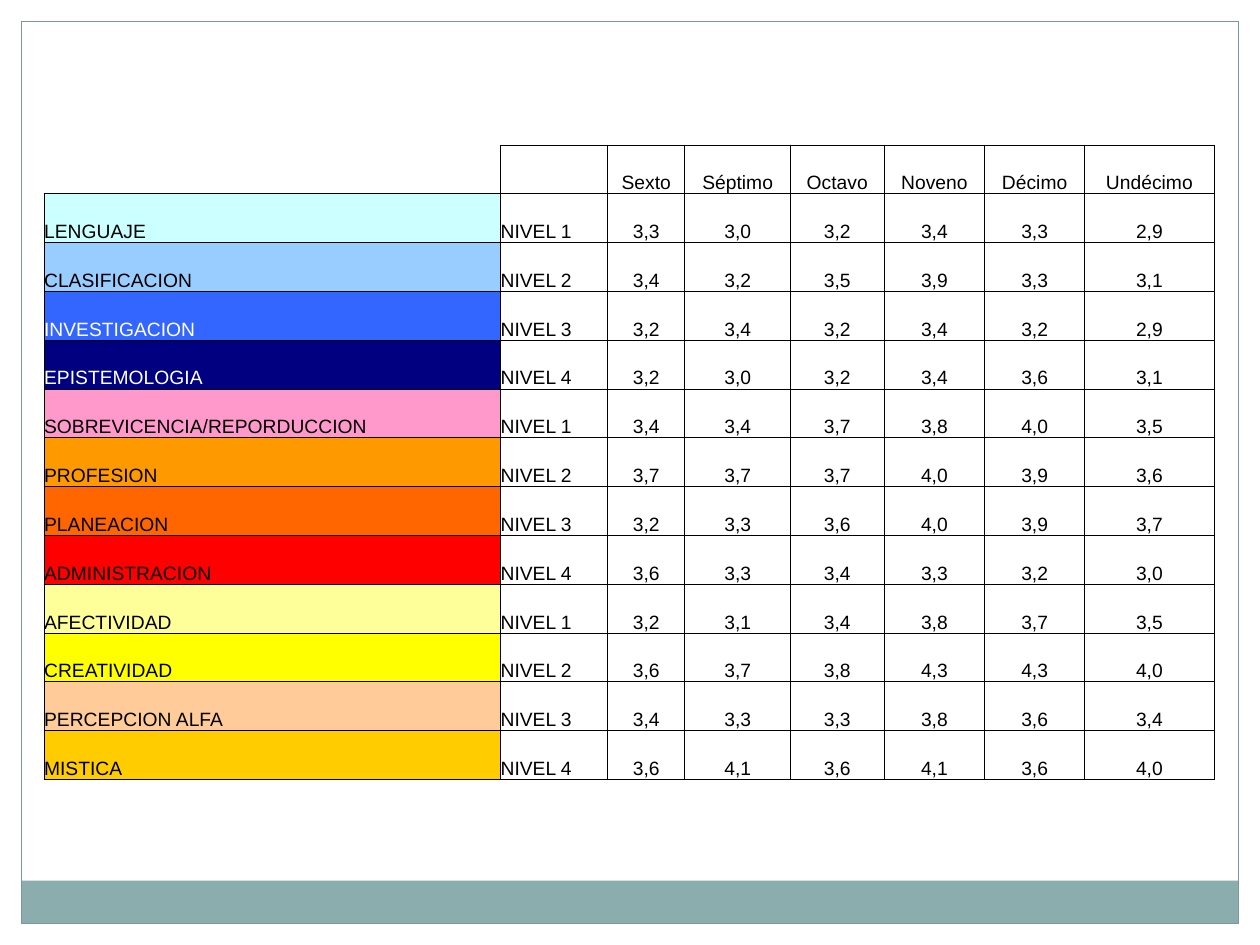
from lxml import etree
from pptx import Presentation
from pptx.dml.color import RGBColor
from pptx.enum.shapes import MSO_SHAPE
from pptx.enum.text import MSO_ANCHOR, PP_ALIGN
from pptx.oxml.ns import qn
from pptx.util import Inches, Pt

RECTANGLE = MSO_SHAPE.RECTANGLE
BOTTOM = MSO_ANCHOR.BOTTOM
LEFT, CENTER = PP_ALIGN.LEFT, PP_ALIGN.CENTER

BLACK = RGBColor(0x00, 0x00, 0x00)
WHITE = RGBColor(0xFF, 0xFF, 0xFF)
BAND = RGBColor(0x8C, 0xAD, 0xAE)
FRAME = RGBColor(0x7C, 0x99, 0x9A)
LIGHT_CYAN = RGBColor(0xCC, 0xFF, 0xFF)
SKY_BLUE = RGBColor(0x99, 0xCC, 0xFF)
BLUE = RGBColor(0x33, 0x66, 0xFF)
NAVY = RGBColor(0x00, 0x00, 0x80)
PINK = RGBColor(0xFF, 0x99, 0xCC)
ORANGE = RGBColor(0xFF, 0x99, 0x00)
DARK_ORANGE = RGBColor(0xFF, 0x66, 0x00)
RED = RGBColor(0xFF, 0x00, 0x00)
PALE_YELLOW = RGBColor(0xFF, 0xFF, 0x99)
YELLOW = RGBColor(0xFF, 0xFF, 0x00)
PEACH = RGBColor(0xFF, 0xCC, 0x99)
GOLD = RGBColor(0xFF, 0xCC, 0x00)

FONT = "Arial"
SIDES = "LRTB"
LABEL_SPAN = 4
LEVELS = 4
COLUMN_WIDTHS = [0.34, 0.73, 0.81, 1.74, 0.85, 0.61, 0.84, 0.74, 0.8, 0.79, 1.03]
GRADES = ["Sexto", "Séptimo", "Octavo", "Noveno", "Décimo", "Undécimo"]
AREAS = [
    ("LENGUAJE", LIGHT_CYAN, BLACK, "3,3 3,0 3,2 3,4 3,3 2,9"),
    ("CLASIFICACION", SKY_BLUE, BLACK, "3,4 3,2 3,5 3,9 3,3 3,1"),
    ("INVESTIGACION", BLUE, WHITE, "3,2 3,4 3,2 3,4 3,2 2,9"),
    ("EPISTEMOLOGIA", NAVY, WHITE, "3,2 3,0 3,2 3,4 3,6 3,1"),
    ("SOBREVICENCIA/REPORDUCCION", PINK, BLACK, "3,4 3,4 3,7 3,8 4,0 3,5"),
    ("PROFESION", ORANGE, BLACK, "3,7 3,7 3,7 4,0 3,9 3,6"),
    ("PLANEACION", DARK_ORANGE, BLACK, "3,2 3,3 3,6 4,0 3,9 3,7"),
    ("ADMINISTRACION", RED, BLACK, "3,6 3,3 3,4 3,3 3,2 3,0"),
    ("AFECTIVIDAD", PALE_YELLOW, BLACK, "3,2 3,1 3,4 3,8 3,7 3,5"),
    ("CREATIVIDAD", YELLOW, BLACK, "3,6 3,7 3,8 4,3 4,3 4,0"),
    ("PERCEPCION ALFA", PEACH, BLACK, "3,4 3,3 3,3 3,8 3,6 3,4"),
    ("MISTICA", GOLD, BLACK, "3,6 4,1 3,6 4,1 3,6 4,0"),
]


def add_rectangle(slide, left, top, width, height, fill=None, line=None):
    """Add a plain rectangle with an optional fill and outline."""
    shape = slide.shapes.add_shape(RECTANGLE, left, top, width, height)
    shape.shadow.inherit = False
    if fill is None:
        shape.fill.background()
    else:
        shape.fill.solid()
        shape.fill.fore_color.rgb = fill
    if line is None:
        shape.line.fill.background()
    else:
        shape.line.color.rgb = line
        shape.line.width = Pt(0.75)


def add_frame(slide, left, top, width, height):
    """Draw the white margins, the bottom band and the outline in the given box."""
    margin, band = Inches(0.17), Inches(0.34)
    right, bottom = left + width - margin, top + height - margin
    add_rectangle(slide, left, top, width, margin, WHITE)
    for side in (right, left):
        add_rectangle(slide, side, top, margin, height, WHITE)
    inner_width = width - 2 * margin
    add_rectangle(slide, left + margin, bottom - band, inner_width, band, BAND)
    add_rectangle(slide, left + margin, top + margin, inner_width,
                  height - 2 * margin, line=FRAME)


def set_borders(cell, visible):
    """Give the named sides a thin black line and hide the others."""
    properties = cell._tc.get_or_add_tcPr()
    for side in SIDES:
        line = etree.SubElement(properties, qn(f"a:ln{side}"), w=str(Pt(0.5)))
        if side in visible:
            fill = etree.SubElement(line, qn("a:solidFill"))
            etree.SubElement(fill, qn("a:srgbClr"), val=str(BLACK))
        else:
            etree.SubElement(line, qn("a:noFill"))


def format_cell(cell, visible=SIDES, fill=None):
    """Set the borders, fill, margins and anchor of a cell."""
    set_borders(cell, visible)
    if fill is None:
        cell.fill.background()
    else:
        cell.fill.solid()
        cell.fill.fore_color.rgb = fill
    cell.margin_left = cell.margin_right = cell.margin_top = cell.margin_bottom = 0
    cell.vertical_anchor = BOTTOM


def write_cell(cell, text, alignment=CENTER, color=BLACK):
    """Write one line of text into a cell."""
    paragraph = cell.text_frame.paragraphs[0]
    paragraph.text = text
    paragraph.alignment = alignment
    for run in paragraph.runs:
        run.font.name = FONT
        run.font.size = Pt(11)
        run.font.color.rgb = color


def add_score_table(slide, left, top, width, height):
    """Build the table of scores by area, level and grade in the given box."""
    row_count = len(AREAS) + 1
    table = slide.shapes.add_table(
        row_count, len(COLUMN_WIDTHS), left, top, width, height).table
    table.first_row = table.horz_banding = False
    for column, share in zip(table.columns, COLUMN_WIDTHS):
        column.width = int(width * share / sum(COLUMN_WIDTHS))
    for row in table.rows:
        row.height = height // row_count

    first_grade = LABEL_SPAN + 1
    for index in range(len(COLUMN_WIDTHS)):
        visible = SIDES if index >= LABEL_SPAN else "B"
        if index == LABEL_SPAN - 1:
            visible = "RB"
        format_cell(table.cell(0, index), visible)
    for index, grade in enumerate(GRADES, first_grade):
        write_cell(table.cell(0, index), grade)

    for row, (name, fill, color, scores) in enumerate(AREAS, 1):
        for index in range(len(COLUMN_WIDTHS)):
            format_cell(table.cell(row, index),
                        fill=fill if index < LABEL_SPAN else None)
        label = table.cell(row, 0)
        label.merge(table.cell(row, LABEL_SPAN - 1))
        write_cell(label, name, LEFT, color)
        level = (row - 1) % LEVELS + 1
        write_cell(table.cell(row, LABEL_SPAN), f"NIVEL {level}", LEFT)
        for index, score in enumerate(scores.split(), first_grade):
            write_cell(table.cell(row, index), score)


def main():
    """Create the presentation and save it."""
    presentation = Presentation()
    presentation.slide_width = Inches(10)
    presentation.slide_height = Inches(7.5)
    slide = presentation.slides.add_slide(presentation.slide_layouts[6])
    add_frame(slide, 0, 0, presentation.slide_width, presentation.slide_height)
    add_score_table(slide, Inches(0.35), Inches(1.15), Inches(9.29), Inches(5.04))
    presentation.save("out.pptx")


if __name__ == "__main__":
    main()
